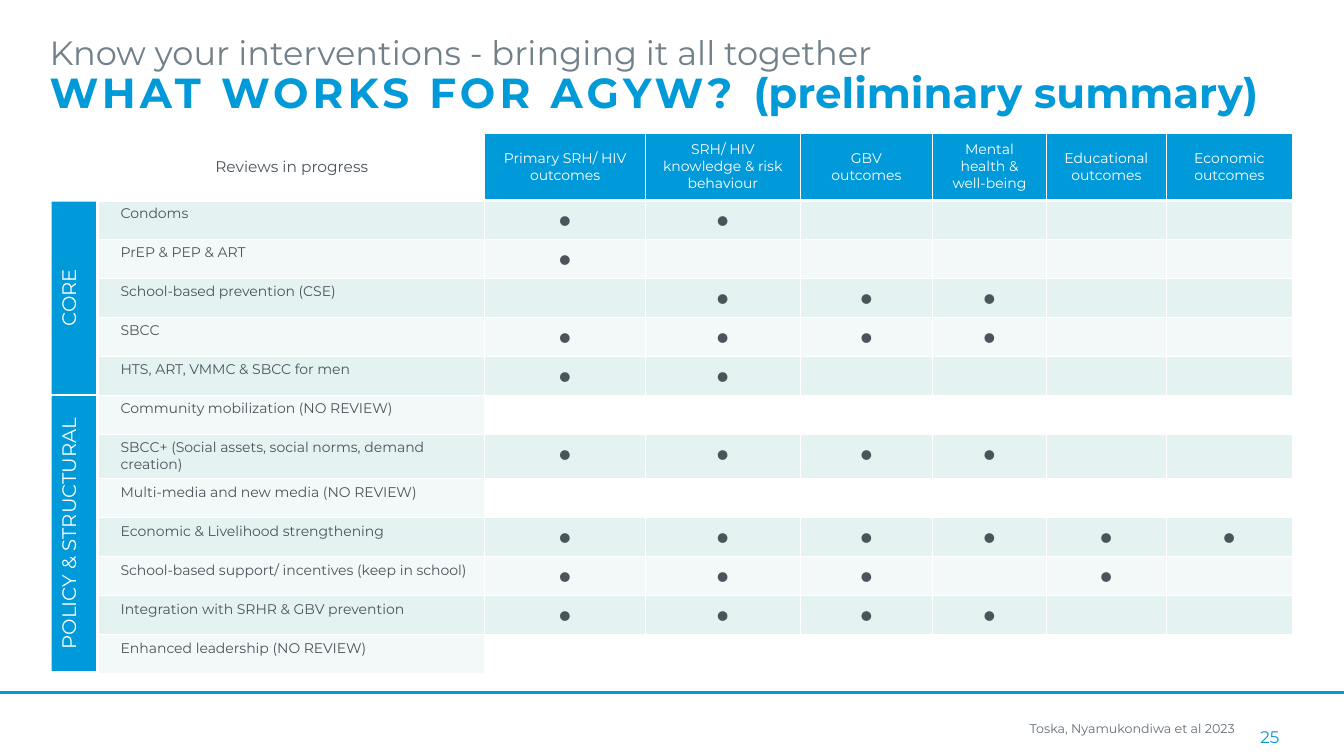
from lxml.etree import SubElement
from pptx import Presentation
from pptx.dml.color import RGBColor
from pptx.enum.shapes import MSO_CONNECTOR, MSO_SHAPE
from pptx.enum.text import MSO_ANCHOR, PP_ALIGN
from pptx.oxml.ns import qn
from pptx.util import Cm, Pt

COLOURS = {
    "blue": "009ADA", "title": "009AD9", "heading": "72808A", "ink": "4B545B",
    "credit": "626E77", "dark": "E4F3F1", "light": "F2F9F8", "white": "FFFFFF",
}
FONT = "Montserrat"
DOT = "⦁"
COLUMN_WIDTHS = [9.73, 4.04, 3.91, 3.33, 2.87, 3.02, 3.18]
HEADER_HEIGHT = 1.7
HEADERS = [
    "Reviews in progress", "Primary SRH/ HIV outcomes",
    "SRH/ HIV knowledge & risk behaviour", "GBV\voutcomes",
    "Mental\vhealth & well-being", "Educational\voutcomes", "Economic\voutcomes",
]
INTERVENTIONS = [
    ("Condoms", [1, 2]),
    ("PrEP & PEP & ART", [1]),
    ("School-based prevention (CSE)", [2, 3, 4]),
    ("SBCC", [1, 2, 3, 4]),
    ("HTS, ART, VMMC & SBCC for men", [1, 2]),
    ("Community mobilization (NO REVIEW)", []),
    ("SBCC+ (Social assets, social norms, demand creation)", [1, 2, 3, 4]),
    ("Multi-media and new media (NO REVIEW)", []),
    ("Economic & Livelihood strengthening", [1, 2, 3, 4, 5, 6]),
    ("School-based support/ incentives (keep in school)", [1, 2, 3, 5]),
    ("Integration with SRHR & GBV prevention", [1, 2, 3, 4]),
    ("Enhanced leadership (NO REVIEW)", []),
]


def colour(name):
    return RGBColor.from_string(COLOURS[name])


def style_span(span, size, ink, bold=False):
    span.font.name = FONT
    span.font.size = Pt(size)
    span.font.bold = bold
    span.font.color.rgb = colour(ink)


def write(frame, text, size, ink, align=PP_ALIGN.LEFT):
    frame.text = text
    for para in frame.paragraphs:
        para.alignment = align
        for span in para.runs:
            style_span(span, size, ink)


def add_text(page, box, text, size, ink, align=PP_ALIGN.LEFT):
    frame = page.shapes.add_textbox(*map(Cm, box)).text_frame
    frame.word_wrap = True
    write(frame, text, size, ink, align)
    return frame


def set_borders(cell, top, bottom):
    properties = cell._tc.get_or_add_tcPr()
    for side, width in (("L", 1), ("R", 1), ("T", top), ("B", bottom)):
        line = SubElement(properties, qn(f"a:ln{side}"), w=str(Pt(width)))
        fill = SubElement(line, qn("a:solidFill"))
        SubElement(fill, qn("a:srgbClr"), val=COLOURS["white"])


def fill_cell(cell, name):
    cell.fill.solid()
    cell.fill.fore_color.rgb = colour(name)


def draw_title(page, box):
    frame = add_text(page, box, "Know your interventions - bringing it all together",
                     24, "heading")
    para = frame.add_paragraph()
    para.line_spacing = 0.9
    for text, spacing in (("WHAT WORKS FOR AGYW? ", 300), ("(preliminary summary)", 0)):
        span = para.add_run()
        span.text = text
        style_span(span, 30, "title", bold=True)
        span.font._element.set("spc", str(spacing))


def draw_header_cell(cell, column, text):
    set_borders(cell, 1, 3)
    fill_cell(cell, "blue" if column else "white")
    cell.vertical_anchor = MSO_ANCHOR.MIDDLE
    size, ink = (10, "white") if column else (11, "ink")
    write(cell.text_frame, text, size, ink, PP_ALIGN.CENTER)


def draw_body_cell(cell, row, column, label, outcomes):
    set_borders(cell, 3 if row == 1 else 1, 1)
    if column == 0 or outcomes:
        fill_cell(cell, "dark" if row % 2 else "light")
    else:
        cell.fill.background()
    if column == 0:
        cell.margin_left = Cm(0.55)
        write(cell.text_frame, label, 10, "ink")
    elif column in outcomes:
        write(cell.text_frame, DOT, 16, "ink", PP_ALIGN.CENTER)
    else:
        cell.margin_top = cell.margin_bottom = 0


def draw_matrix(page, box):
    left, top, width, height = box
    row_count = len(INTERVENTIONS) + 1
    table = page.shapes.add_table(row_count, len(HEADERS), *map(Cm, box)).table
    table.first_row = table.horz_banding = False
    for column, share in zip(table.columns, COLUMN_WIDTHS):
        column.width = Cm(width * share / sum(COLUMN_WIDTHS))
    for index, row in enumerate(table.rows):
        body_height = (height - HEADER_HEIGHT) / len(INTERVENTIONS)
        row.height = Cm(body_height if index else HEADER_HEIGHT)
    for column, text in enumerate(HEADERS):
        draw_header_cell(table.cell(0, column), column, text)
    for row, (label, outcomes) in enumerate(INTERVENTIONS, 1):
        for column in range(len(HEADERS)):
            draw_body_cell(table.cell(row, column), row, column, label, outcomes)


def draw_group_label(page, box, text):
    bar = page.shapes.add_shape(MSO_SHAPE.RECTANGLE, *map(Cm, box))
    bar.shadow.inherit = False
    bar.fill.solid()
    bar.fill.fore_color.rgb = colour("blue")
    bar.line.fill.background()
    frame = bar.text_frame
    frame.word_wrap = True
    frame.vertical_anchor = MSO_ANCHOR.TOP
    frame._txBody.bodyPr.set("vert", "vert270")
    write(frame, text, 14, "white", PP_ALIGN.CENTER)


def draw_footer(page, box):
    left, top, width, height = box
    rule = page.shapes.add_connector(
        MSO_CONNECTOR.STRAIGHT, Cm(left), Cm(top), Cm(left + width), Cm(top))
    rule.line.color.rgb = colour("blue")
    rule.line.width = Pt(2)
    SubElement(rule._element.spPr, qn("a:effectLst"))
    add_text(page, (left + 25.7, top + 0.58, 8.1, 0.64),
             "Toska, Nyamukondiwa et al 2023", 9, "credit")
    number = add_text(page, (left + 24.87, top + 0.61, 7.62, 1.02),
                      "25", 12, "blue", PP_ALIGN.RIGHT)
    number.vertical_anchor = MSO_ANCHOR.MIDDLE


def main():
    deck = Presentation()
    deck.slide_width, deck.slide_height = Cm(33.87), Cm(19.05)
    page = deck.slides.add_slide(deck.slide_layouts[6])
    draw_matrix(page, (2.49, 3.35, 30.08, 13.5))
    draw_group_label(page, (1.3, 5.08, 1.12, 4.85), "CORE")
    draw_group_label(page, (1.3, 9.98, 1.12, 6.93), "POLICY & STRUCTURAL")
    draw_title(page, (1, 0.69, 32.8, 2.44))
    draw_footer(page, (0, 17.45, 33.87, 1.6))
    deck.save("out.pptx")


if __name__ == "__main__":
    main()
